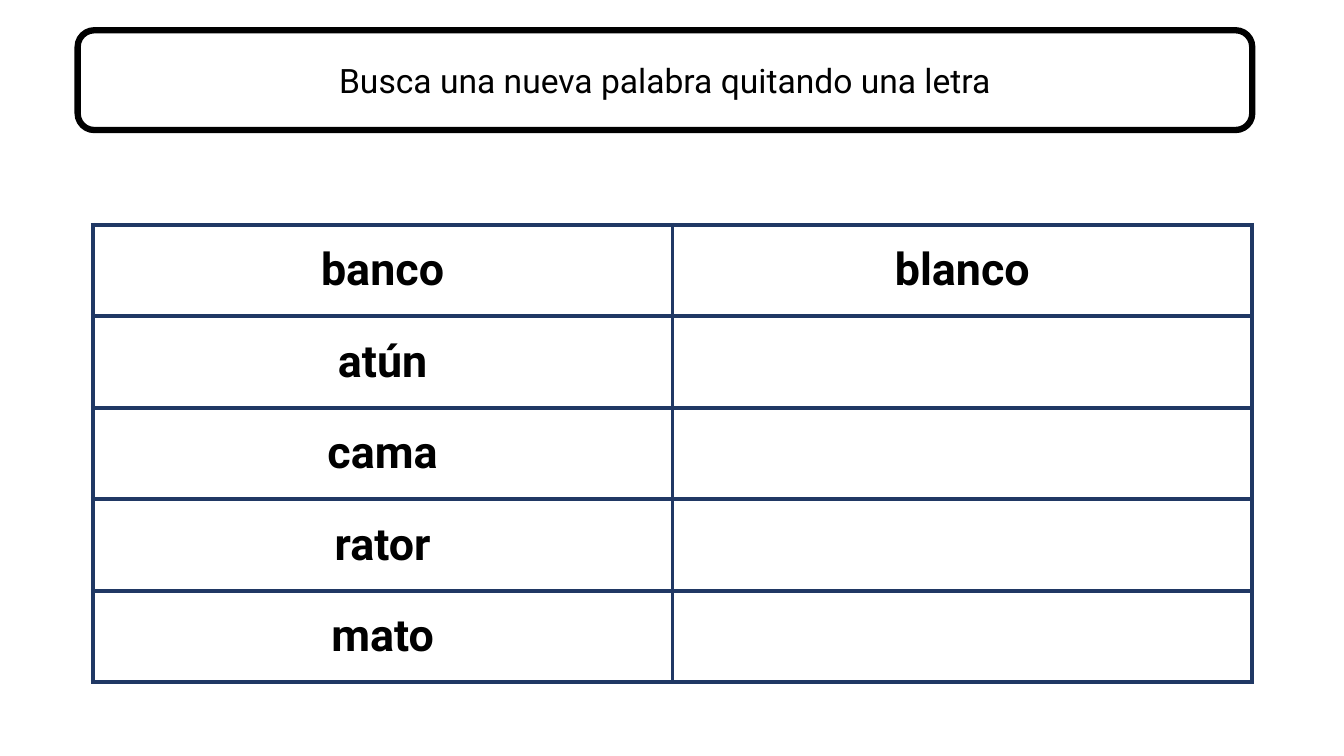
from lxml import etree
from pptx import Presentation
from pptx.dml.color import RGBColor
from pptx.enum import shapes, text
from pptx.oxml import ns
from pptx.util import Inches, Pt

BLACK, WHITE, NAVY = "000000", "FFFFFF", "203864"
ROWS = [("banco", "blanco"), ("atún", ""), ("cama", ""), ("rator", ""), ("mato", "")]


def paint(fill, color):
    fill.solid()
    fill.fore_color.rgb = RGBColor.from_string(color)


def write(frame, words, size=24, bold=False, color=BLACK, font="Roboto"):
    par = frame.paragraphs[0]
    par.alignment = text.PP_ALIGN.CENTER
    par.font.size = Pt(size)
    if words:
        run = par.add_run()
        run.text = words
        run.font.name = font
        run.font.size = Pt(size)
        run.font.bold = bold
        paint(run.font.fill, color)


def frame_cell(cell, color, width):
    props = cell._tc.get_or_add_tcPr()
    for spot, side in enumerate(("lnL", "lnR", "lnT", "lnB")):
        line = etree.Element(ns.qn(f"a:{side}"), w=str(Pt(width)))
        fill = etree.SubElement(line, ns.qn("a:solidFill"))
        etree.SubElement(fill, ns.qn("a:srgbClr"), val=color)
        props.insert(spot, line)


def add_title(slide, words):
    box = slide.shapes.add_shape(
        shapes.MSO_SHAPE.ROUNDED_RECTANGLE,
        Inches(0.77), Inches(0.3), Inches(11.65), Inches(0.99))
    box.shadow.inherit = False
    paint(box.fill, WHITE)
    paint(box.line.fill, BLACK)
    box.line.width = Pt(4.5)
    box.text_frame.word_wrap = True
    box.text_frame.vertical_anchor = text.MSO_ANCHOR.MIDDLE
    write(box.text_frame, words)


def add_grid(slide, rows):
    grid = slide.shapes.add_table(
        len(rows), len(rows[0]),
        Inches(0.92), Inches(2.23), Inches(11.5), Inches(4.54)).table
    for r, row in enumerate(rows):
        for c, word in enumerate(row):
            cell = grid.cell(r, c)
            paint(cell.fill, WHITE)
            cell.vertical_anchor = text.MSO_ANCHOR.MIDDLE
            write(cell.text_frame, word, size=32, bold=True)
            frame_cell(cell, NAVY, 3)


def main():
    deck = Presentation()
    deck.slide_width, deck.slide_height = Inches(13.33), Inches(7.5)
    slide = deck.slides.add_slide(deck.slide_layouts[6])
    add_title(slide, "Busca una nueva palabra quitando una letra")
    add_grid(slide, ROWS)
    deck.save("out.pptx")


if __name__ == "__main__":
    main()
